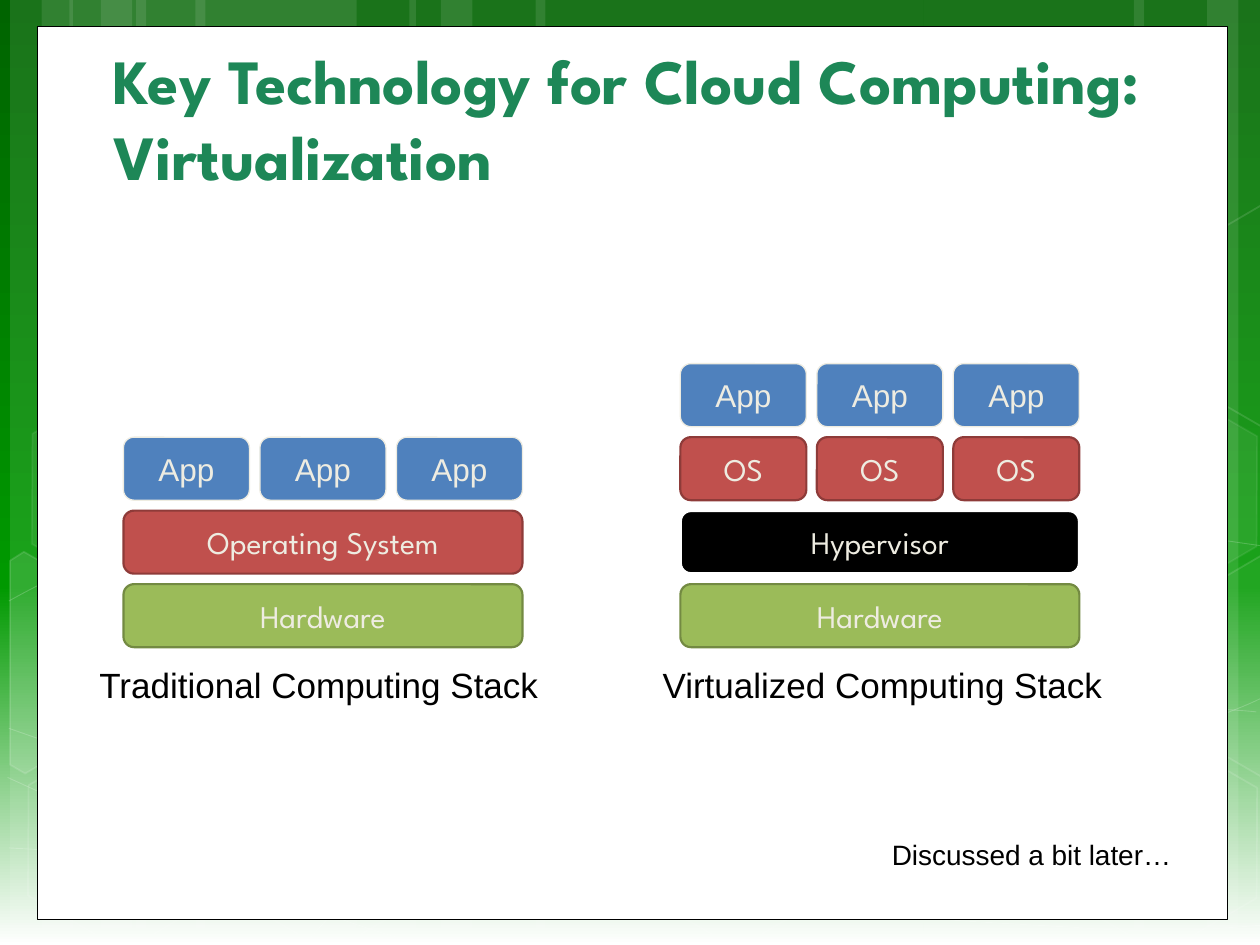
from copy import deepcopy

from pptx import Presentation
from pptx.dml.color import RGBColor
from pptx.enum.shapes import MSO_SHAPE
from pptx.enum.text import MSO_ANCHOR, MSO_AUTO_SIZE, PP_ALIGN
from pptx.oxml.ns import qn
from pptx.util import Inches, Pt

RECT, ROUND, HEX = MSO_SHAPE.RECTANGLE, MSO_SHAPE.ROUNDED_RECTANGLE, MSO_SHAPE.HEXAGON
LEFT, CENTER = PP_ALIGN.LEFT, PP_ALIGN.CENTER
MIDDLE, BOTTOM = MSO_ANCHOR.MIDDLE, MSO_ANCHOR.BOTTOM
FIT, NONE = MSO_AUTO_SIZE.SHAPE_TO_FIT_TEXT, MSO_AUTO_SIZE.NONE

COLORS = {
    "white": "FFFFFF", "black": "000000", "title": "1D8757", "cream": "EEECE1",
    "blue": "4F81BD", "red": "C0504D", "rust": "8E3B39",
    "green": "9BBB59", "moss": "738A42", "dark": "006400", "mid": "009900",
}
HEAD, BODY = "League Spartan", "Arial"

# Layer style: fill, line, line width, font
STYLES = {
    "Hardware": ("green", "moss", 1.25, HEAD),
    "Operating System": ("red", "rust", 1.25, HEAD),
    "OS": ("red", "rust", 1.25, HEAD),
    "Hypervisor": ("black", "white", 1.75, HEAD),
    "App": ("blue", "cream", 0.75, BODY),
}
# Layers from the bottom up, with the number of boxes in each
STACKS = [
    (0.98, [("Hardware", 1), ("Operating System", 1), ("App", 3)]),
    (5.4, [("Hardware", 1), ("Hypervisor", 1), ("OS", 3), ("App", 3)]),
]
LABELS = [
    ("Traditional Computing Stack", 0.69, 5.22, 3.72, 0.44, 20),
    ("Virtualized Computing Stack", 5.16, 5.22, 3.72, 0.44, 20),
    ("Discussed a bit later…", 6.98, 6.6, 2.45, 0.37, 16),
]
# Box grid: gaps of a twelfth of an inch
GAP, HIGH = 1 / 12, 0.5
PITCH, STEP = 1 + GAP, HIGH + GAP
WIDE, BASE = 3 + 2 * GAP, 3.47 + 2 * STEP

# Backdrop: left and width of each stripe
STRIPES = [
    (1.08, 1.75), (0.08, 0.5), (0.33, 0.83), (1.55, 1.75), (0.55, 0.5), (0.8, 0.83),
    (7.33, 1.75), (9.58, 0.5), (9, 0.83), (4.25, 3.08), (3.25, 0.5), (3.5, 0.83),
]
# Start point, then two controls and an end point for each curved part
CURVES = [
    [(0.07, 6.73), (0.61, 6.76), (1.15, 6.79), (1.9, 6.78), (2.65, 6.77), (3.58, 6.75),
     (4.58, 6.65), (5.58, 6.55), (7, 6.36), (7.92, 6.17), (8.83, 5.98), (9.77, 5.68),
     (10.07, 5.51)],
    [(0.07, 4.77), (0.36, 4.61), (0.65, 4.46), (1.21, 4.31), (1.78, 4.16), (2.59, 3.94),
     (3.47, 3.87), (4.36, 3.8), (5.44, 3.79), (6.54, 3.87), (7.64, 3.95), (9.47, 4.26),
     (10.07, 4.34)],
    [(0.06, 6.17), (1.27, 6.72), (2.47, 7.27), (3.34, 7.49)],
    [(0.07, 5.78), (0.38, 5.89), (0.7, 6), (1.28, 6.16), (1.86, 6.31), (2.73, 6.56),
     (3.57, 6.73), (4.4, 6.9), (5.45, 7.08), (6.28, 7.18), (7.11, 7.29), (8, 7.33),
     (8.53, 7.36), (9.05, 7.4), (9.19, 7.38), (9.45, 7.38), (9.71, 7.37), (9.89, 7.35),
     (10.07, 7.34)],
    [(2.42, 7.49), (2.6, 7.29), (2.78, 7.09), (3.02, 6.91), (3.26, 6.73), (3.6, 6.53),
     (3.88, 6.39), (4.16, 6.25), (4.33, 6.19), (4.7, 6.09), (5.06, 5.99), (5.73, 5.85),
     (6.08, 5.78), (6.44, 5.71), (6.49, 5.71), (6.8, 5.69), (7.11, 5.66), (7.6, 5.63),
     (7.94, 5.62), (8.29, 5.61), (8.86, 5.62), (8.86, 5.62), (9.08, 5.62), (9.31, 5.62),
     (9.53, 5.62), (9.71, 5.63), (9.88, 5.64), (9.97, 5.65)],
]
# Left, top, fill opacity and line opacity in percent
HEXES = [
    (3.34, 0.36, 4, 8), (4.97, 5.89, 6, 12), (0.11, 5.91, 0, 12), (0.14, 3.12, 7, 8),
    (1.74, 5.92, 0, 12), (8.34, 5.93, 0, 12), (8.34, 3.14, 7, 8),
]
# Hexagons cut off at the slide's edge: points and fill opacity
CUTS = [
    ([(0.08, 4.45), (0.19, 4.38), (0.96, 4.82), (0.95, 5.7), (0.2, 6.14), (0.08, 6.07)], 10),
    ([(9.26, 4.85), (10.01, 4.41), (10.09, 4.46), (10.09, 6.13), (10.02, 6.17),
      (9.26, 5.73)], 4),
    ([(9.26, 2.07), (10.01, 1.63), (10.1, 1.68), (10.09, 3.35), (10.02, 3.39),
      (9.26, 2.95)], 0),
]


def rgb(name):
    return RGBColor.from_string(COLORS[name])


def paint(shape, fill=None, line=None, width=1):
    shape.shadow.inherit = False
    if fill:
        shape.fill.solid()
        shape.fill.fore_color.rgb = rgb(fill)
    else:
        shape.fill.background()
    if line:
        shape.line.color.rgb = rgb(line)
        shape.line.width = Pt(width)
    else:
        shape.line.fill.background()


def veil(shape, fill=0, line=0, width=1):
    """Paint in see-through white; opacities are in percent."""
    paint(shape, "white" if fill else None, "white" if line else None, width)
    shown = [part for part in (fill, line) if part]
    for color, part in zip(shape.element.spPr.iter(qn("a:srgbClr")), shown):
        color.append(color.makeelement(qn("a:alpha"), {"val": str(part * 1000)}))


def add_box(slide, kind, x, y, w, h):
    return slide.shapes.add_shape(kind, Inches(x), Inches(y), Inches(w), Inches(h))


def add_lines(slide, points, close):
    spots = [(Inches(x), Inches(y)) for x, y in points]
    pen = slide.shapes.build_freeform(*spots[0], scale=1.0)
    pen.add_line_segments(spots[1:], close=close)
    return pen.convert_to_shape()


def add_curve(slide, knots):
    """Join each three points into one cubic curve."""
    shape = add_lines(slide, knots, False)
    track = next(shape.element.iter(qn("a:path")))
    lines = list(track.iter(qn("a:lnTo")))
    for i in range(0, len(lines), 3):
        bend = track.makeelement(qn("a:cubicBezTo"), {})
        for line in lines[i:i + 3]:
            bend.append(line[0])
            track.remove(line)
        track.append(bend)
    return shape


def set_text(frame, text, font, size, color, align=LEFT, bold=False):
    frame.text = text
    para = frame.paragraphs[0]
    para.alignment = align
    face = para.runs[0].font
    face.name, face.size, face.bold = font, Pt(size), bold
    face.color.rgb = rgb(color)


def add_back(slide):
    fill = slide.background.fill
    fill.gradient()
    fill.gradient_angle = 270
    stops = next(slide.element.iter(qn("a:gsLst")))
    stops.append(deepcopy(stops[-1]))
    marks = [(0, "dark"), (0.62, "mid"), (1, "white")]
    for stop, (place, name) in zip(fill.gradient_stops, marks):
        stop.position = place
        stop.color.rgb = rgb(name)


def add_decor(slide):
    for x, w in STRIPES:
        veil(add_box(slide, RECT, x, 0, w, 7.5), fill=10)
    for knots in CURVES:
        veil(add_curve(slide, knots), line=20, width=0.5)
    for x, y, fill, line in HEXES:
        tile = add_box(slide, HEX, x, y, 1.75, 1.52)
        tile.adjustments[0] = 0.285
        tile.rotation = 30
        veil(tile, fill, line)
    for points, fill in CUTS:
        veil(add_lines(slide, points, True), fill, 12)
    # White panel
    paint(add_box(slide, RECT, 0.3, 0.21, 9.44, 7.09), "white", "black", 0.5)
    # The decoration belongs to the layout
    for shape in list(slide.shapes):
        if not shape.is_placeholder:
            slide.slide_layout.shapes.element.append(shape.element)


def add_title(slide, text):
    title = slide.shapes.title
    title.left, title.top = Inches(0.8), Inches(0.82)
    title.width, title.height = Inches(8.42), Inches(0.76)
    frame = title.text_frame
    set_text(frame, text, HEAD, 36, "title", bold=True)
    frame.vertical_anchor = BOTTOM
    frame.auto_size = NONE


def add_stack(slide, left, layers):
    for row, (name, count) in enumerate(layers):
        fill, line, width, font = STYLES[name]
        for col in range(count):
            box = add_box(slide, ROUND, left + col * PITCH, BASE - row * STEP,
                          WIDE if count == 1 else 1, HIGH)
            paint(box, fill, line, width)
            set_text(box.text_frame, name, font, 18, "cream", CENTER)
            box.text_frame.vertical_anchor = MIDDLE


def add_label(slide, text, x, y, w, h, size):
    box = slide.shapes.add_textbox(Inches(x), Inches(y), Inches(w), Inches(h))
    set_text(box.text_frame, text, BODY, size, "black")
    box.text_frame.word_wrap = False
    box.text_frame.auto_size = FIT


def main():
    deck = Presentation()
    deck.slide_width, deck.slide_height = Inches(10), Inches(7.5)
    slide = deck.slides.add_slide(deck.slide_layouts[5])
    add_back(slide)
    add_decor(slide)
    add_title(slide, "Key Technology for Cloud Computing: Virtualization")
    for left, layers in STACKS:
        add_stack(slide, left, layers)
    for label in LABELS:
        add_label(slide, *label)
    deck.save("out.pptx")


if __name__ == "__main__":
    main()
